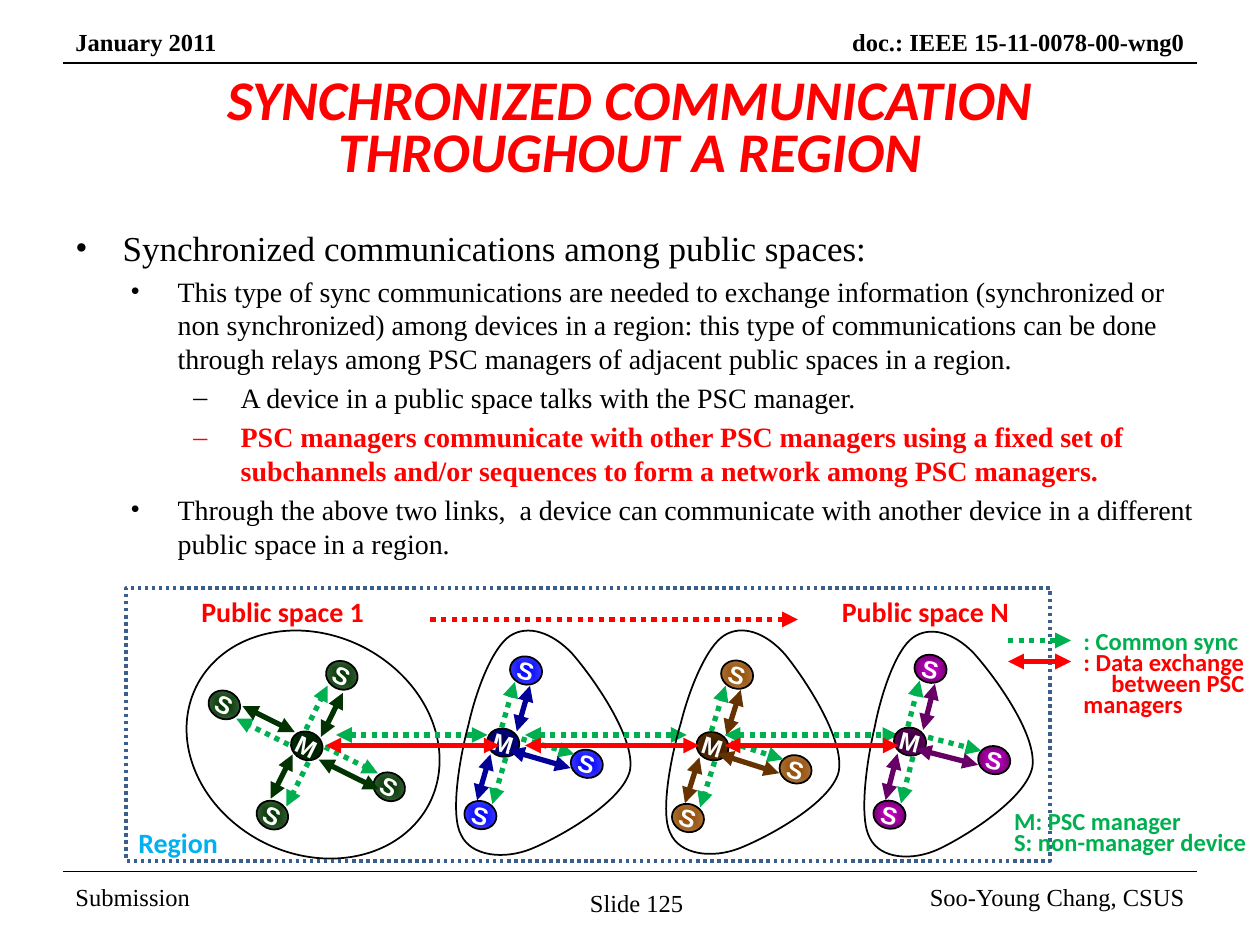
from dataclasses import dataclass
from math import cos, radians, sin

from lxml.etree import SubElement
from pptx import Presentation
from pptx.dml.color import RGBColor
from pptx.enum.dml import MSO_LINE_DASH_STYLE as Dash
from pptx.enum.shapes import MSO_CONNECTOR as Connector, MSO_SHAPE as Preset
from pptx.enum.text import MSO_ANCHOR as Anchor, PP_ALIGN as Align
from pptx.oxml.ns import qn
from pptx.util import Pt

BLACK = RGBColor(0x00, 0x00, 0x00)
WHITE = RGBColor(0xFF, 0xFF, 0xFF)
RED = RGBColor(0xFF, 0x00, 0x00)
GREEN = RGBColor(0x00, 0xB0, 0x50)
SKY = RGBColor(0x00, 0xB0, 0xF0)
STEEL = RGBColor(0x3A, 0x5F, 0x8C)
FOREST = [RGBColor.from_string(c) for c in ("001800", "003300", "446944")]
BLUE = [RGBColor.from_string(c) for c in ("000047", "000099", "0101FF", "4545FF")]
BROWN = [RGBColor.from_string(c) for c in ("2F1800", "663300", "924900", "AF7A44")]
PURPLE = [RGBColor.from_string(c) for c in ("2F002F", "660066", "CC00CC", "5E005E")]

SERIF, SANS, LABEL = "Times New Roman", "Calibri", "Arial"


@dataclass
class Spoke:
    """A device around a manager; lengths run along the spoke, sides clockwise of it."""
    turn: float
    device: tuple  # along, side
    data: tuple  # start, end, side
    sync: tuple  # start, end, side


ROUND_SPOKES = [
    Spoke(180, (52.6, 0), (9.6, 43, 4), (9.6, 43, -4)),
    Spoke(-90, (45, 0), (8.2, 36.2, 5), (8.2, 36.2, -4.6)),
    Spoke(90, (44.2, 0), (8, 36.2, 5), (8, 36.2, -5)),
    Spoke(0, (52.6, 0), (9.6, 48, 4), (9.6, 43.4, -4)),
]
TRIANGLE_SPOKES = [
    Spoke(0, (49.2, -1.7), (4.3, 41, 3.2), (9.4, 40.8, -5)),
    Spoke(-90, (43.2, 1), (8.4, 35.5, 5.6), (8, 35.2, -3.3)),
    Spoke(90, (43.4, 1), (8.4, 35.8, 5.2), (8, 35.5, -3.8)),
]
TRIANGLE_WIDTH = 98
TRIANGLE_CURVE = [
    (-48.2, -3.6), (-49.5, -23.5), (-47.4, -49.5), (-39.5, -58.6), (-31.7, -67.6),
    (-17.3, -67.3), (-2.8, -58.8), (11.8, -49.5), (45.9, -22.7), (47.7, -3.7),
    (48.5, 14.8), (19.6, 44.1), (6.2, 54.8), (-7.2, 65.4), (-25.8, 68.6),
    (-34.7, 58.5), (-44.1, 49.2), (-47.9, 15.8), (-48.2, -3.6),
]


def turned(origin, point, degrees):
    """Point given relative to origin, turned clockwise around it."""
    c, s = cos(radians(degrees)), sin(radians(degrees))
    x, y = point
    return origin[0] + x * c - y * s, origin[1] + x * s + y * c


def style(paragraph, size, color, font=SERIF, bold=False, italic=False):
    for run in paragraph.runs:
        face = run.font
        face.name, face.size, face.bold, face.italic = font, Pt(size), bold, italic
        face.color.rgb = color


def add_text(shapes, box, text, size, color, font=SERIF, bold=False, italic=False,
             align=Align.LEFT, anchor=Anchor.TOP, wrap=True, spacing=None):
    frame = shapes.add_textbox(*map(Pt, box)).text_frame
    frame.text, frame.word_wrap, frame.vertical_anchor = text, wrap, anchor
    for paragraph in frame.paragraphs:
        paragraph.alignment = align
        if spacing:
            paragraph.line_spacing = Pt(spacing)
        style(paragraph, size, color, font, bold, italic)
    return frame


def add_line(shapes, start, end, color=BLACK, width=0.75, dotted=False, arrows=()):
    line = shapes.add_connector(Connector.STRAIGHT, *map(Pt, (*start, *end)))
    line.line.color.rgb, line.line.width = color, Pt(width)
    if dotted:
        line.line.dash_style = Dash.ROUND_DOT
    properties = line._element.spPr
    for end_name in arrows:
        SubElement(properties.find(qn("a:ln")), qn(f"a:{end_name}"), type="triangle")
    SubElement(properties, qn("a:effectLst"))


def add_sync(shapes, start, end, arrows=("tailEnd",)):
    add_line(shapes, start, end, GREEN, 3, True, arrows)


def add_data(shapes, start, end, color=RED):
    add_line(shapes, start, end, color, 3, arrows=("headEnd", "tailEnd"))


def outline(shape, color=BLACK, width=1):
    shape.shadow.inherit = False
    shape.fill.background()
    shape.line.color.rgb, shape.line.width = color, Pt(width)


def add_oval(shapes, centre, width, height, tilt):
    box = (centre[0] - width / 2, centre[1] - height / 2, width, height)
    oval = shapes.add_shape(Preset.OVAL, *map(Pt, box))
    oval.rotation = tilt
    outline(oval)
    return oval


def add_node(shapes, letter, centre, tilt, inner, outer):
    node = add_oval(shapes, centre, 18.5, 16, tilt)
    node.fill.gradient()
    for stop, color in zip(node.fill.gradient_stops, (inner, outer)):
        stop.color.rgb = color
    gradient = node._element.spPr.find(qn("a:gradFill"))
    gradient.remove(gradient.find(qn("a:lin")))
    shading = SubElement(gradient, qn("a:path"), path="shape")
    SubElement(shading, qn("a:fillToRect"), l="50000", t="50000", r="50000", b="50000")
    frame = node.text_frame
    frame.text, frame.word_wrap, frame.vertical_anchor = letter, False, Anchor.MIDDLE
    frame.margin_left = frame.margin_right = frame.margin_top = frame.margin_bottom = 0
    frame.paragraphs[0].alignment = Align.CENTER
    style(frame.paragraphs[0], 14, WHITE, LABEL, True)


def add_triangle(shapes, centre, width, tilt):
    """Rounded triangle: every three points after the first make one Bezier section."""
    scale = width / TRIANGLE_WIDTH
    points = [(Pt(centre[0] + x * scale), Pt(centre[1] + y)) for x, y in TRIANGLE_CURVE]
    builder = shapes.build_freeform(*points[0])
    builder.add_line_segments(points[1:], close=True)
    triangle = builder.convert_to_shape()
    triangle.rotation = tilt
    outline(triangle)
    segments = list(triangle._element.iter(qn("a:lnTo")))
    for section in zip(segments[::3], segments[1::3], segments[2::3]):
        section[0].addprevious(curve := section[0].makeelement(qn("a:cubicBezTo")))
        for segment in section:
            curve.append(segment[0])
            segment.getparent().remove(segment)


def add_space(slide, hub, tilt, colors, spokes, add_outline, outline_box, link=None):
    """Outline box is centre and size, as add_outline takes them."""
    shapes = slide.shapes.add_group_shape().shapes
    if link:
        add_sync(shapes, *link, arrows=("headEnd", "tailEnd"))
    add_node(shapes, "M", hub, tilt, *colors[:2])
    for spoke in spokes:
        angle = tilt + spoke.turn
        add_node(shapes, "S", turned(hub, spoke.device, angle), tilt, *colors[-2:])
        for draw, (start, end, side), extra in ((add_sync, spoke.sync, ()),
                                                (add_data, spoke.data, (colors[1],))):
            draw(shapes, turned(hub, (start, side), angle),
                 turned(hub, (end, side), angle), *extra)
    add_outline(shapes, *outline_box, tilt)


def add_region(slide, left, top, width, height):
    shapes = slide.shapes
    for name, x in (("Public space 1", 36), ("Public space N", 402)):
        add_text(shapes, (left + x, top, 110, 26.6), name, 16, RED, SANS, True, wrap=False)
    add_line(shapes, (left + 174, top + 18), (left + 384, top + 18), RED, 3, True, ("tailEnd",))
    sync_y, data_y = top + 84, top + 90
    add_space(slide, (left + 103.3, top + 90.2), 26.4, FOREST, ROUND_SPOKES,
              add_oval, ((left + 106.9, top + 89.5), 149, 125.3))
    for x, y, tilt, colors, middle, breadth, link in (
            (215.6, 88.4, 16.2, BLUE, 241, 98, (120, 206.6)),
            (335.2, 90.4, 17.6, BROWN, 361.2, 96.5, (228, 320.4)),
            (448, 87.8, 14.4, PURPLE, 472.1, 95, (342, 441.4))):
        add_space(slide, (left + x, top + y), tilt, colors, TRIANGLE_SPOKES,
                  add_triangle, ((left + middle, top + 94.5), breadth),
                  [(left + end, sync_y) for end in link])
    for i in range(3):
        start = left + 114 * (i + 1)
        add_data(shapes, (start, data_y), (start + 99.5, data_y))
    region = shapes.add_shape(Preset.RECTANGLE, *map(Pt, (left, top, width, height)))
    outline(region, STEEL, 2)
    region.line.dash_style = Dash.ROUND_DOT
    add_text(shapes, (left, top + 132, 60.5, 26.6), "Region", 16, SKY, SANS, True, wrap=False)


def add_legend(slide, left, top):
    shapes = slide.shapes
    add_sync(shapes, (left, top + 12), (left + 36, top + 12))
    add_data(shapes, (left, top + 24), (left + 36, top + 24))
    frame = add_text(shapes, (left + 36, top, 108, 60.5),
                     ": Common sync\n: Data exchange\v\tbetween PSC managers",
                     14, GREEN, SANS, True)
    exchange = frame.paragraphs[1]
    exchange.line_spacing = Pt(12)
    style(exchange, 14, RED, SANS, True)
    tabs = SubElement(exchange._p.get_or_add_pPr(), qn("a:tabLst"))
    SubElement(tabs, qn("a:tab"), pos=str(Pt(16)), algn="l")
    add_text(shapes, (left - 3.6, top + 108, 147.6, 32.4),
             "M: PSC manager\nS: non-manager device", 14, GREEN, SANS, True,
             wrap=False, spacing=12)


def add_body(slide, box):
    items = [
        (1, "Synchronized communications among public spaces:", False),
        (2, "This type of sync communications are needed to exchange information (synchronized or non synchronized) among devices in a region: this type of communications can be done through relays among PSC managers of adjacent public spaces in a region.", False),
        (3, "A device in a public space talks with the PSC manager.", False),
        (3, "PSC managers communicate with other PSC managers using a fixed set of subchannels and/or sequences to form a network among PSC managers.", True),
        (2, "Through the above two links,  a device can communicate with another device in a different public space in a region.", False),
    ]
    levels = {1: (27, 20, "•"), 2: (58.5, 16, "•"), 3: (94.5, 16, "–")}
    frame = add_text(slide.shapes, box, "\n".join(item[1] for item in items), 16, BLACK)
    for paragraph, (level, _, stressed) in zip(frame.paragraphs, items):
        margin, size, bullet = levels[level]
        style(paragraph, size, RED if stressed else BLACK, bold=stressed)
        paragraph.level, paragraph.space_before = level - 1, Pt(size * 0.2)
        properties = paragraph._p.get_or_add_pPr()
        properties.set("marL", str(Pt(margin)))
        properties.set("indent", str(Pt(-27)))
        SubElement(properties, qn("a:buFont"), typeface=SERIF)
        SubElement(properties, qn("a:buChar"), char=bullet)


def add_header(slide, left, top, width):
    shapes, right = slide.shapes, left + width
    add_line(shapes, (left, top + 24), (right, top + 24))
    add_text(shapes, (left, top, 102, 24.5), "January 2011", 14, BLACK, bold=True)
    add_text(shapes, (right - 258, top, 258, 24.5), "doc.: IEEE 15-11-0078-00-wng0",
             14, BLACK, bold=True, align=Align.RIGHT)


def add_footer(slide, left, top, width):
    shapes, right = slide.shapes, left + width
    add_line(shapes, (left, top), (right, top))
    add_text(shapes, (left, top, 168, 29), "Submission", 14, BLACK, anchor=Anchor.MIDDLE)
    add_text(shapes, (right - 168, top, 168, 29), "Soo-Young Chang, CSUS", 14, BLACK,
             align=Align.RIGHT, anchor=Anchor.MIDDLE)
    add_text(shapes, (left + 294, top + 6, 68.4, 24.5), "Slide 125", 14, BLACK, wrap=False)


def main():
    deck = Presentation()
    deck.slide_width, deck.slide_height = Pt(720), Pt(540)
    slide = deck.slides.add_slide(deck.slide_layouts[6])
    add_header(slide, 36, 12, 648)
    add_footer(slide, 36, 498, 648)
    add_text(slide.shapes, (36, 30, 648, 90), "SYNCHRONIZED COMMUNICATION THROUGHOUT A REGION",
             32, RED, SANS, True, True, Align.CENTER, Anchor.MIDDLE, spacing=30)
    add_body(slide, (36, 126, 654, 372))
    add_region(slide, 72, 336, 528, 156)
    add_legend(slide, 576, 354)
    deck.save("out.pptx")


if __name__ == "__main__":
    main()
